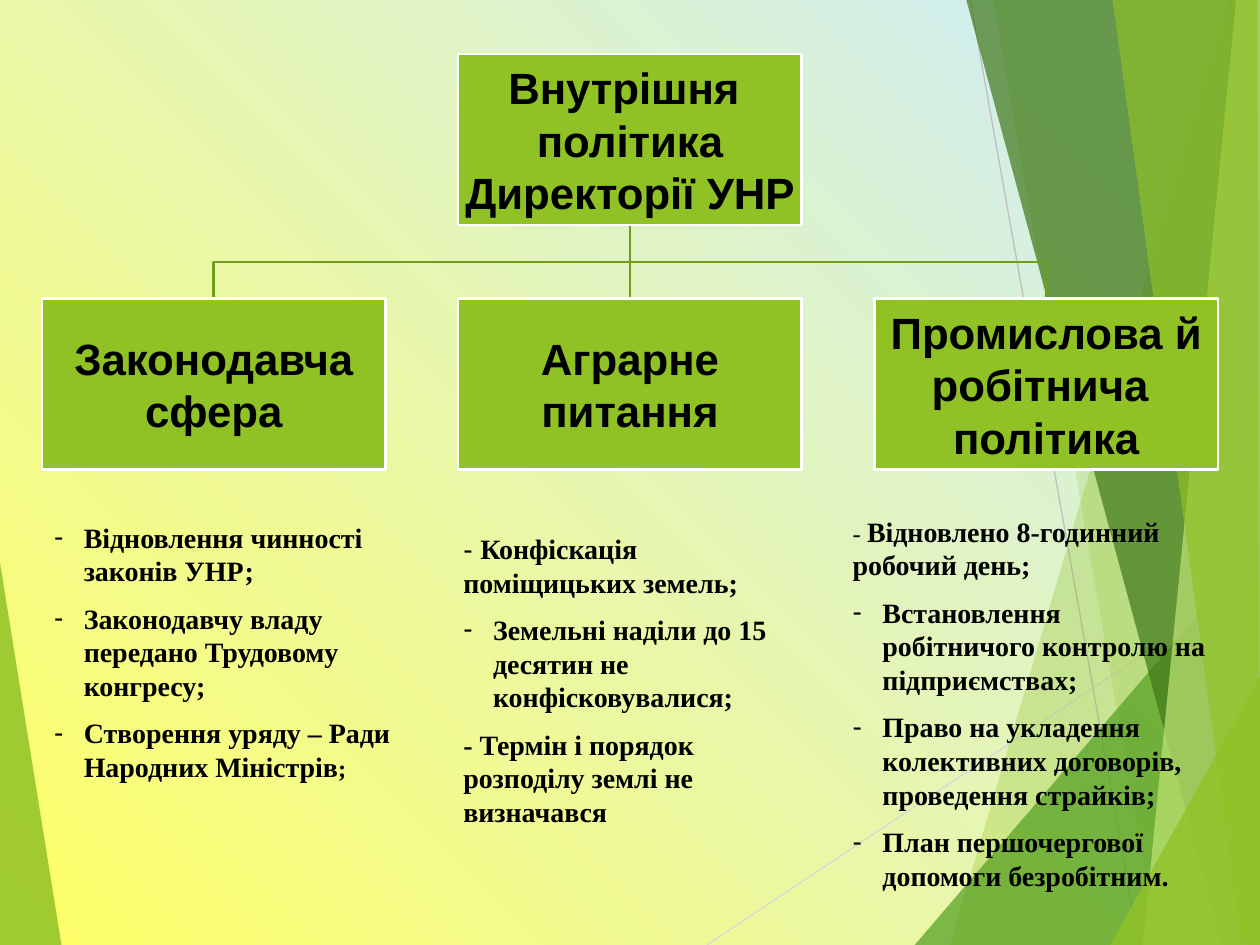
from dataclasses import dataclass

from lxml.etree import SubElement
from pptx import Presentation
from pptx.dml.color import RGBColor
from pptx.enum.shapes import MSO_CONNECTOR, MSO_SHAPE
from pptx.enum.text import MSO_ANCHOR, PP_ALIGN
from pptx.oxml.ns import qn
from pptx.slide import Slide
from pptx.util import Cm, Pt

YELLOW = RGBColor(0xFF, 0xFF, 0x66)
SKY = RGBColor(0xCC, 0xEC, 0xFF)
LIME = RGBColor(0x90, 0xC2, 0x26)
PALE_LIME = RGBColor(0xC0, 0xE4, 0x74)
GREEN = RGBColor(0x54, 0xA0, 0x21)
DARK_GREEN = RGBColor(0x3F, 0x78, 0x19)
OLIVE = RGBColor(0x73, 0x9B, 0x1E)
LIGHT_GREY = RGBColor(0xD9, 0xD9, 0xD9)
GREY = RGBColor(0xBF, 0xBF, 0xBF)
WHITE = RGBColor(0xFF, 0xFF, 0xFF)
BLACK = RGBColor(0x00, 0x00, 0x00)

WIDTH, HEIGHT, RIGHT = 25.4, 19.05, 25.43
BOX_WIDTH, BOX_HEIGHT = 6.93, 3.45
ROOT_TOP, BRANCH_TOP, BUS = 1.09, 6.02, 5.28
CENTER, PITCH = WIDTH / 2, 8.39

HEADING = {"name": "Arial", "size": Pt(25), "bold": True}
BODY = {"name": "Times New Roman", "size": Pt(16), "bold": True}
SMALL_BOLD = {**BODY, "size": Pt(14)}
SMALL = {**SMALL_BOLD, "bold": False}
ARIAL_DASH = {"name": "Arial", "size": Pt(16), "bold": False}

FACETS = [
    ([(24.77, 0), (19.15, HEIGHT), (RIGHT, HEIGHT), (RIGHT, 0)], LIME, 30),
    ([(20.02, 0), (23.34, HEIGHT), (RIGHT, HEIGHT), (RIGHT, 0)], LIME, 20),
    ([(18.44, HEIGHT), (RIGHT, 10.9), (RIGHT, HEIGHT)], GREEN, 72),
    ([(19.48, 0), (24.64, HEIGHT), (RIGHT, HEIGHT), (RIGHT, 0)], DARK_GREEN, 70),
    ([(24.92, 0), (23.04, HEIGHT), (RIGHT, HEIGHT), (RIGHT, 0)], PALE_LIME, 70),
    ([(22.43, 0), (25.04, HEIGHT), (WIDTH, HEIGHT), (25.35, 0)], LIME, 65),
    ([(22.38, HEIGHT), (RIGHT, 13.59), (RIGHT, HEIGHT)], LIME, 80),
]

BRANCHES = [
    ["Законодавча", "сфера"],
    ["Аграрне", "питання"],
    ["Промислова й", "робітнича ", "політика"],
]

LISTS = [
    ((0.84, 10.36, 7.42, 7.52), [
        (True, [("Відновлення чинності законів УНР;", BODY)]),
        (True, [("Законодавчу владу передано Трудовому конгресу;", BODY)]),
        (True, [("Створення уряду – Ради Народних Міністрів", BODY), (";", SMALL_BOLD)]),
    ]),
    ((9.09, 10.59, 7.42, 7.32), [
        (False, [("- ", ARIAL_DASH), ("Конфіскація поміщицьких земель;", BODY)]),
        (True, [("Земельні наділи до 15 десятин не конфісковувалися;", BODY)]),
        (False, [("- Термін і порядок розподілу землі не визначався", BODY)]),
    ]),
    ((16.94, 10.24, 7.62, 9.9), [
        (False, [("- ", SMALL), ("Відновлено 8-годинний робочий день;", BODY)]),
        (True, [("Встановлення робітничого контролю на підприємствах;", BODY)]),
        (True, [("Право на укладення колективних договорів, проведення страйків;", BODY)]),
        (True, [("План першочергової допомоги безробітним.", BODY)]),
    ]),
]


@dataclass
class PolicySlide:
    """Draws the elements of the policy chart on one slide."""

    slide: Slide
    text_color: RGBColor = BLACK
    box_color: RGBColor = LIME
    indent: float = 0.6

    def background(self, start, end):
        fill = self.slide.background.fill
        fill.gradient()
        fill.gradient_angle = 45
        for stop, color, position in zip(fill.gradient_stops, (start, end), (0, 1)):
            stop.color.rgb = color
            stop.position = position

    def outline(self, points, closed):
        (left, top), *others = [(Cm(x), Cm(y)) for x, y in points]
        builder = self.slide.shapes.build_freeform(left, top)
        builder.add_line_segments(others, close=closed)
        shape = builder.convert_to_shape()
        shape.shadow.inherit = False
        return shape

    def facet(self, points, color, opacity):
        shape = self.outline(points, True)
        shape.fill.solid()
        shape.fill.fore_color.rgb = color
        shape.line.fill.background()
        color_element = shape._element.spPr.find(qn("a:solidFill"))[0]
        SubElement(color_element, qn("a:alpha"), val=str(opacity * 1000))

    def elbow(self, points, color, width):
        shape = self.outline(points, False)
        shape.fill.background()
        shape.line.color.rgb = color
        shape.line.width = Pt(width)

    def line(self, start, end, color, width):
        lengths = [Cm(value) for value in (*start, *end)]
        connector = self.slide.shapes.add_connector(MSO_CONNECTOR.STRAIGHT, *lengths)
        connector.line.color.rgb = color
        connector.line.width = Pt(width)
        SubElement(connector._element.spPr, qn("a:effectLst"))

    def add_text(self, paragraph, text, style):
        run = paragraph.add_run()
        run.text = text
        for name, value in style.items():
            setattr(run.font, name, value)
        run.font.color.rgb = self.text_color

    def paragraphs(self, frame, count):
        return [frame.paragraphs[0]] + [frame.add_paragraph() for _ in range(count - 1)]

    def box(self, center, top, lines):
        shape = self.slide.shapes.add_shape(
            MSO_SHAPE.RECTANGLE, Cm(center - BOX_WIDTH / 2), Cm(top), Cm(BOX_WIDTH), Cm(BOX_HEIGHT))
        shape.shadow.inherit = False
        shape.fill.solid()
        shape.fill.fore_color.rgb = self.box_color
        shape.line.color.rgb = WHITE
        shape.line.width = Pt(1.5)
        frame = shape.text_frame
        layout = {"word_wrap": True, "vertical_anchor": MSO_ANCHOR.MIDDLE}
        layout.update({f"margin_{side}": Cm(0.05) for side in ("left", "top", "right", "bottom")})
        for name, value in layout.items():
            setattr(frame, name, value)
        for paragraph, text in zip(self.paragraphs(frame, len(lines)), lines):
            paragraph.alignment = PP_ALIGN.CENTER
            self.add_text(paragraph, text, HEADING)

    def text_list(self, place, items):
        frame = self.slide.shapes.add_textbox(*[Cm(value) for value in place]).text_frame
        frame.word_wrap = True
        for paragraph, (bulleted, runs) in zip(self.paragraphs(frame, len(items)), items):
            paragraph.space_before = Pt(8)
            if bulleted:
                properties = paragraph._p.get_or_add_pPr()
                properties.set("marL", str(Cm(self.indent)))
                properties.set("indent", str(-Cm(self.indent)))
                SubElement(properties, qn("a:buFont"), typeface="Arial")
                SubElement(properties, qn("a:buChar"), char="-")
            for text, style in runs:
                self.add_text(paragraph, text, style)


def main():
    presentation = Presentation()
    presentation.slide_width, presentation.slide_height = Cm(WIDTH), Cm(HEIGHT)
    policy = PolicySlide(presentation.slides.add_slide(presentation.slide_layouts[6]))
    policy.background(YELLOW, SKY)
    policy.facet([(-0.03, 11.15), (1.24, HEIGHT), (-0.03, HEIGHT)], LIME, 85)
    policy.line((14.25, HEIGHT), (RIGHT, 11.61), LIGHT_GREY, 0.75)
    policy.line((19.56, 0), (22.96, HEIGHT), GREY, 0.75)
    for facet in FACETS:
        policy.facet(*facet)

    root_bottom = ROOT_TOP + BOX_HEIGHT
    centers = [CENTER + step * PITCH for step in (-1, 0, 1)]
    for center in (centers[2], centers[0]):
        route = [(CENTER, root_bottom), (CENTER, BUS), (center, BUS), (center, BRANCH_TOP)]
        policy.elbow(route, OLIVE, 1.5)
    policy.line((CENTER, root_bottom), (CENTER, BRANCH_TOP), OLIVE, 1.5)
    policy.box(CENTER, ROOT_TOP, ["Внутрішня ", "політика", "Директорії УНР"])
    for center, lines in zip(centers, BRANCHES):
        policy.box(center, BRANCH_TOP, lines)
    for place, items in LISTS:
        policy.text_list(place, items)
    presentation.save("out.pptx")


if __name__ == "__main__":
    main()
